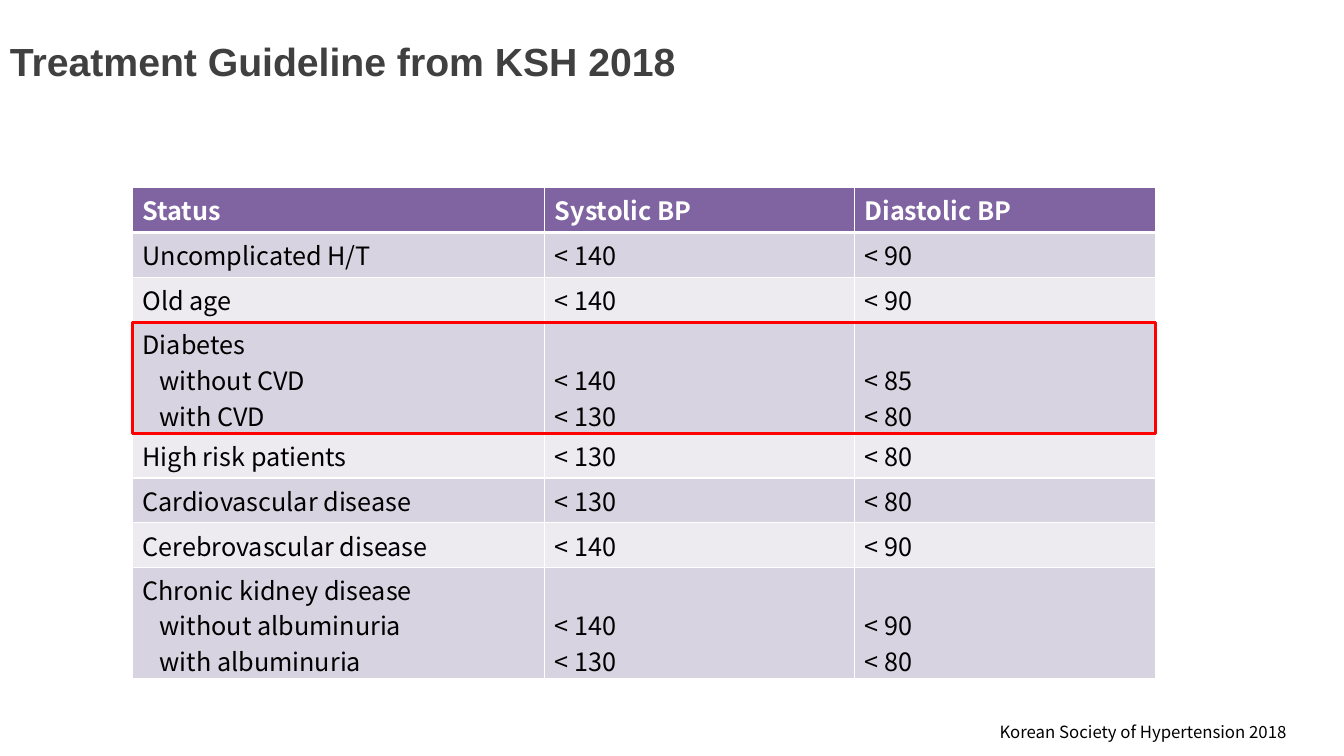
from lxml.etree import SubElement
from pptx import Presentation
from pptx.dml.color import RGBColor
from pptx.enum.shapes import MSO_SHAPE as Shape
from pptx.enum.text import MSO_ANCHOR as Anchor
from pptx.oxml import parse_xml
from pptx.oxml.ns import nsdecls, qn
from pptx.util import Cm, Pt

BODY_FONT = "Noto Sans CJK KR"
HEADER_FILL, BAND_FILLS = "8064A2", ("D8D3E0", "EDEAF0")
COLUMN_WIDTHS = (10.39, 7.8, 7.59)
LINE_ROW, GROUP_ROW = 1.13, 2.8  # row heights in cm
TOP_MARGIN, LINE_STEP, INDENT = 0.1, 0.9, 0.43

# Status, systolic and diastolic targets; a group has one heading and two cases
HEADER = ("Status", "Systolic BP", "Diastolic BP")
TARGETS = [
    ("Uncomplicated H/T", "< 140", "< 90"),
    ("Old age", "< 140", "< 90"),
    (("Diabetes", "without CVD", "with CVD"), ("< 140", "< 130"), ("< 85", "< 80")),
    ("High risk patients", "< 130", "< 80"),
    ("Cardiovascular disease", "< 130", "< 80"),
    ("Cerebrovascular disease", "< 140", "< 90"),
    (("Chronic kidney disease", "without albuminuria", "with albuminuria"),
     ("< 140", "< 130"), ("< 90", "< 80")),
]
ROWS = [HEADER] + TARGETS
HIGHLIGHTED_ROW = 3


def color(value):
    return RGBColor.from_string(value)


def set_font(paragraph, name, size, value, bold=False):
    font = paragraph.font
    font.name, font.size, font.bold = name, Pt(size), bold
    font.color.rgb = color(value)


def add_text(slide, box, text, name, size, value, bold=False, wrap=True):
    shape = slide.shapes.add_textbox(*map(Cm, box))
    frame = shape.text_frame
    frame.word_wrap = wrap
    frame.vertical_anchor = Anchor.MIDDLE
    paragraph = frame.paragraphs[0]
    paragraph.text = text
    set_font(paragraph, name, size, value, bold)


def set_borders(cell, bottom_width):
    properties = cell._tc.get_or_add_tcPr()
    widths = {"lnL": 1, "lnR": 1, "lnT": 1, "lnB": bottom_width}
    for index, (tag, width) in enumerate(widths.items()):
        line = parse_xml(f'<a:{tag} {nsdecls("a")} w="{Pt(width)}"/>')
        fill = SubElement(line, qn("a:solidFill"))
        SubElement(fill, qn("a:srgbClr"), val="FFFFFF")
        properties.insert(index, line)


def fill_cell(cell, content, is_header, fill, is_status):
    is_group = isinstance(content, tuple)
    lines = content if is_group else (content,)
    cell.fill.solid()
    cell.fill.fore_color.rgb = color(fill)
    set_borders(cell, 3 if is_header else 1)
    # Values of a group start beside its second line
    skipped = LINE_STEP if is_group and not is_status else 0
    cell.margin_top, cell.margin_bottom = Cm(TOP_MARGIN + skipped), 0
    frame = cell.text_frame
    for index, text in enumerate(lines):
        paragraph = frame.add_paragraph() if index else frame.paragraphs[0]
        paragraph.text = text
        if is_group:
            paragraph.line_spacing = 0.98
        if index and is_status:
            paragraph._p.get_or_add_pPr().set("marL", str(Cm(INDENT)))
        set_font(paragraph, BODY_FONT, 18, "FFFFFF" if is_header else "000000", is_header)


def add_targets(slide, left, top):
    heights = [GROUP_ROW if isinstance(row[0], tuple) else LINE_ROW for row in ROWS]
    width = sum(COLUMN_WIDTHS)
    table = slide.shapes.add_table(
        len(ROWS), len(COLUMN_WIDTHS), Cm(left), Cm(top), Cm(width), Cm(sum(heights))).table
    for column, column_width in zip(table.columns, COLUMN_WIDTHS):
        column.width = Cm(column_width)
    for row_index, row in enumerate(ROWS):
        table.rows[row_index].height = Cm(heights[row_index])
        fill = BAND_FILLS[(row_index - 1) % 2] if row_index else HEADER_FILL
        for column_index, content in enumerate(row):
            fill_cell(table.cell(row_index, column_index), content,
                      row_index == 0, fill, column_index == 0)

    # Red frame around the diabetes row
    frame_top = top + sum(heights[:HIGHLIGHTED_ROW])
    frame = slide.shapes.add_shape(
        Shape.RECTANGLE, Cm(left), Cm(frame_top), Cm(width), Cm(heights[HIGHLIGHTED_ROW]))
    frame.shadow.inherit = False
    frame.fill.background()
    frame.line.color.rgb = color("FF0000")
    frame.line.width = Pt(2.25)


def main():
    presentation = Presentation()
    presentation.slide_width, presentation.slide_height = Cm(33.87), Cm(19.05)
    slide = presentation.slides.add_slide(presentation.slide_layouts[6])
    # Title
    add_text(slide, (0, 0.05, 33.87, 2.97), "Treatment Guideline from KSH 2018",
             "Arial", 28, "404040", bold=True)
    # Source
    add_text(slide, (24.94, 18.06, 7.77, 0.76), "Korean Society of Hypertension 2018",
             BODY_FONT, 12, "000000", wrap=False)
    # Target table
    add_targets(slide, 3.34, 4.73)
    presentation.save("out.pptx")


if __name__ == "__main__":
    main()
